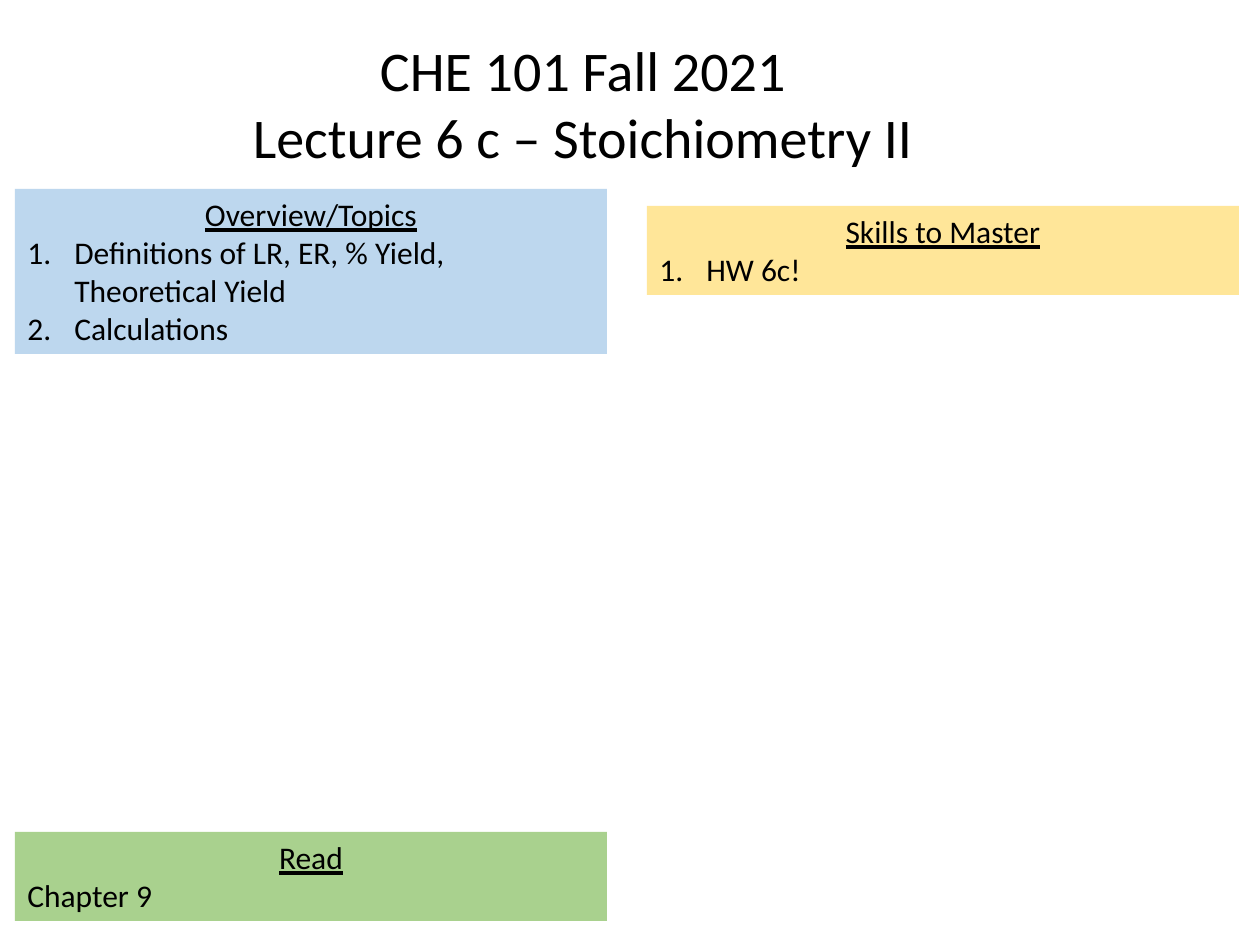
"""Build the opening slide of a chemistry lecture with topics, skills and reading."""
from lxml.etree import SubElement
from pptx import Presentation
from pptx.dml.color import RGBColor
from pptx.enum.text import MSO_ANCHOR, MSO_AUTO_SIZE, PP_ALIGN
from pptx.oxml.ns import qn
from pptx.util import Pt

PX = 914400 // 126
COLORS = {"text": "000000", "topics": "BDD7EE", "skills": "FFE699", "reading": "A9D18E"}
INDENT = 47 * PX


def write_line(paragraph, text, size, alignment):
    paragraph.text = text
    paragraph.alignment = alignment
    paragraph.font.size = Pt(size)
    paragraph.font.name = "Calibri"
    paragraph.font.color.rgb = RGBColor.from_string(COLORS["text"])


def number_line(paragraph):
    properties = paragraph._p.get_or_add_pPr()
    properties.set("marL", str(INDENT))
    properties.set("indent", str(-INDENT))
    SubElement(properties, qn("a:buFont"), typeface="+mj-lt")
    SubElement(properties, qn("a:buAutoNum"), type="arabicPeriod")


presentation = Presentation()
presentation.slide_width = 1260 * PX
presentation.slide_height = 945 * PX
slide = presentation.slides.add_slide(presentation.slide_layouts[6])

panels = [
    ("topics", 15, 189, 165, "Overview/Topics",
     ["Definitions of LR, ER, % Yield, Theoretical Yield", "Calculations"], True),
    ("skills", 647, 206, 89, "Skills to Master", ["HW 6c!"], True),
    ("reading", 15, 832, 89, "Read", ["Chapter 9"], False),
]
for color, left, top, height, heading, lines, numbered in panels:
    panel = slide.shapes.add_textbox(left * PX, top * PX, 592 * PX, height * PX)
    panel.fill.solid()
    panel.fill.fore_color.rgb = RGBColor.from_string(COLORS[color])
    frame = panel.text_frame
    frame.word_wrap = True
    frame.auto_size = MSO_AUTO_SIZE.SHAPE_TO_FIT_TEXT
    write_line(frame.paragraphs[0], heading, 18, PP_ALIGN.CENTER)
    frame.paragraphs[0].font.underline = True
    for line in lines:
        paragraph = frame.add_paragraph()
        write_line(paragraph, line, 18, PP_ALIGN.LEFT)
        if numbered:
            number_line(paragraph)

title = slide.shapes.add_textbox(237 * PX, 29 * PX, 692 * PX, 149 * PX)
frame = title.text_frame
frame.word_wrap = False
frame.auto_size = MSO_AUTO_SIZE.SHAPE_TO_FIT_TEXT
frame.vertical_anchor = MSO_ANCHOR.TOP
write_line(frame.paragraphs[0], "CHE 101 Fall 2021", 32, PP_ALIGN.CENTER)
write_line(frame.add_paragraph(), "Lecture 6 c – Stoichiometry II", 32, PP_ALIGN.CENTER)

presentation.save("out.pptx")
